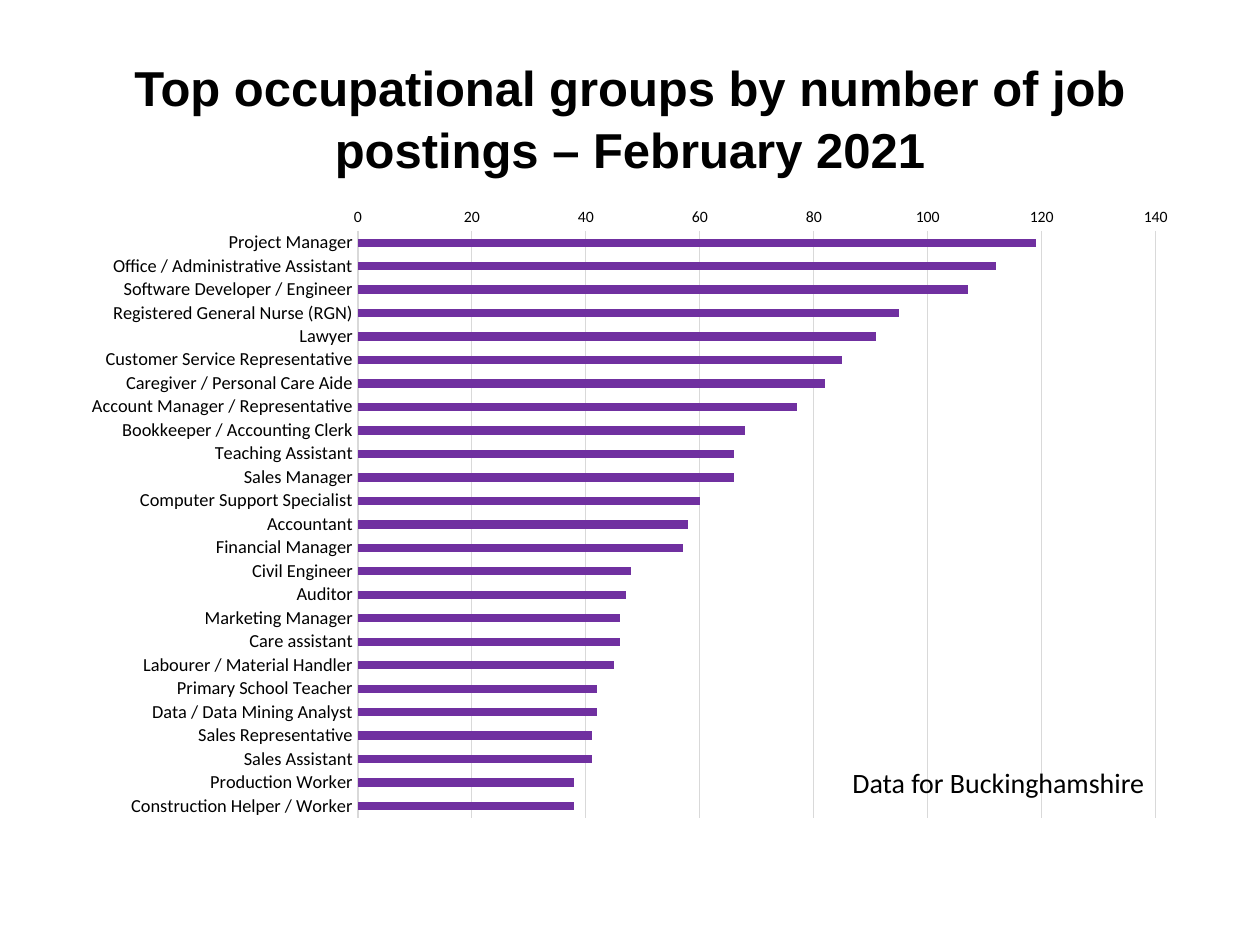
from dataclasses import dataclass

from lxml.etree import SubElement
from pptx import Presentation
from pptx.chart.data import CategoryChartData
from pptx.dml.color import RGBColor
from pptx.enum.chart import XL_CHART_TYPE, XL_TICK_MARK
from pptx.enum.text import MSO_ANCHOR, PP_ALIGN
from pptx.oxml.ns import qn
from pptx.util import Emu, Pt

# Content
TITLE = "Top occupational groups by number of job postings – February 2021"
REGION = "Data for Buckinghamshire"
POSTINGS = [
    ("Project Manager", 119),
    ("Office / Administrative Assistant", 112),
    ("Software Developer / Engineer", 107),
    ("Registered General Nurse (RGN)", 95),
    ("Lawyer", 91),
    ("Customer Service Representative", 85),
    ("Caregiver / Personal Care Aide", 82),
    ("Account Manager / Representative", 77),
    ("Bookkeeper / Accounting Clerk", 68),
    ("Teaching Assistant", 66),
    ("Sales Manager", 66),
    ("Computer Support Specialist", 60),
    ("Accountant", 58),
    ("Financial Manager", 57),
    ("Civil Engineer", 48),
    ("Auditor", 47),
    ("Marketing Manager", 46),
    ("Care assistant", 46),
    ("Labourer / Material Handler", 45),
    ("Primary School Teacher", 42),
    ("Data / Data Mining Analyst", 42),
    ("Sales Representative", 41),
    ("Sales Assistant", 41),
    ("Production Worker", 38),
    ("Construction Helper / Worker", 38),
]


@dataclass(frozen=True)
class Theme:
    ink: RGBColor = RGBColor(0x00, 0x00, 0x00)
    bar: RGBColor = RGBColor(0x70, 0x30, 0xA0)
    grid: RGBColor = RGBColor(0xD9, 0xD9, 0xD9)
    heading: str = "Arial"
    body: str = "Calibri"
    title_size: float = 28
    region_size: float = 16
    chart_size: float = 10
    category_size: float = 10.5
    value_size: float = 9
    hairline: float = 0.75


THEME = Theme()

# Layout in px: left, top, width, height
PX = 914400 // 126
SLIDE = (1260, 945)
TITLE_BOX = (63, 38, 1134, 157)
CHART_BOX = (69, 195, 1120, 635)
PLOT_BOX = (358, 231, 798, 587)
REGION_BOX = (840, 759, 476, 47)


def emu(lengths):
    return [Emu(length * PX) for length in lengths]


def style_font(font, name, size, bold=False):
    font.name, font.size, font.bold = name, Pt(size), bold
    font.color.rgb = THEME.ink


def add_text(slide, box, text, name, size, bold=False):
    frame = slide.shapes.add_textbox(*emu(box)).text_frame
    frame.word_wrap = True
    run = frame.paragraphs[0].add_run()
    run.text = text
    style_font(run.font, name, size, bold)
    return frame


def style_grid_line(line):
    line.color.rgb = THEME.grid
    line.width = Pt(THEME.hairline)


def place_plot(chart):
    """Fix the inner plot area as fractions of the chart frame."""
    left, top, width, height = CHART_BOX
    x, y, w, h = PLOT_BOX
    plot_area = chart.plots[0]._element.getparent()
    layout = plot_area.find(qn("c:layout"))
    if layout is None:
        layout = SubElement(plot_area, qn("c:layout"))
        plot_area.insert(0, layout)
    manual = SubElement(layout, qn("c:manualLayout"))
    settings = {
        "layoutTarget": "inner", "xMode": "edge", "yMode": "edge",
        "x": (x - left) / width, "y": (y - top) / height,
        "w": w / width, "h": h / height,
    }
    for tag, value in settings.items():
        SubElement(manual, qn(f"c:{tag}")).set("val", str(value))


def add_postings_chart(slide):
    data = CategoryChartData(number_format="#,##0")
    data.categories = [occupation for occupation, _ in POSTINGS]
    data.add_series("Series 1", [count for _, count in POSTINGS])
    chart = slide.shapes.add_chart(
        XL_CHART_TYPE.BAR_CLUSTERED, *emu(CHART_BOX), data).chart
    chart.has_legend = False
    chart.has_title = False
    style_font(chart.font, THEME.body, THEME.chart_size)

    # Bars
    plot = chart.plots[0]
    plot.gap_width = 182
    plot.vary_by_categories = False
    fill = plot.series[0].format.fill
    fill.solid()
    fill.fore_color.rgb = THEME.bar

    # Axes
    occupations, counts = chart.category_axis, chart.value_axis
    for axis, size in ((occupations, THEME.category_size),
                       (counts, THEME.value_size)):
        axis.major_tick_mark = axis.minor_tick_mark = XL_TICK_MARK.NONE
        style_font(axis.tick_labels.font, THEME.body, size)
    occupations.reverse_order = True
    style_grid_line(occupations.format.line)
    counts.minimum_scale, counts.maximum_scale = 0, 140
    counts.major_unit = 20
    counts.tick_labels.number_format = "#,##0"
    counts.tick_labels.number_format_is_linked = False
    counts.format.line.fill.background()
    style_grid_line(counts.major_gridlines.format.line)
    place_plot(chart)


def main():
    deck = Presentation()
    deck.slide_width, deck.slide_height = emu(SLIDE)
    slide = deck.slides.add_slide(deck.slide_layouts[6])

    # Title
    title = add_text(slide, TITLE_BOX, TITLE, THEME.heading,
                     THEME.title_size, bold=True)
    title.vertical_anchor = MSO_ANCHOR.MIDDLE
    title.paragraphs[0].alignment = PP_ALIGN.CENTER
    title.paragraphs[0].line_spacing = 1.05

    # Chart and its region label
    add_postings_chart(slide)
    add_text(slide, REGION_BOX, REGION, THEME.body, THEME.region_size)
    deck.save("out.pptx")


if __name__ == "__main__":
    main()
